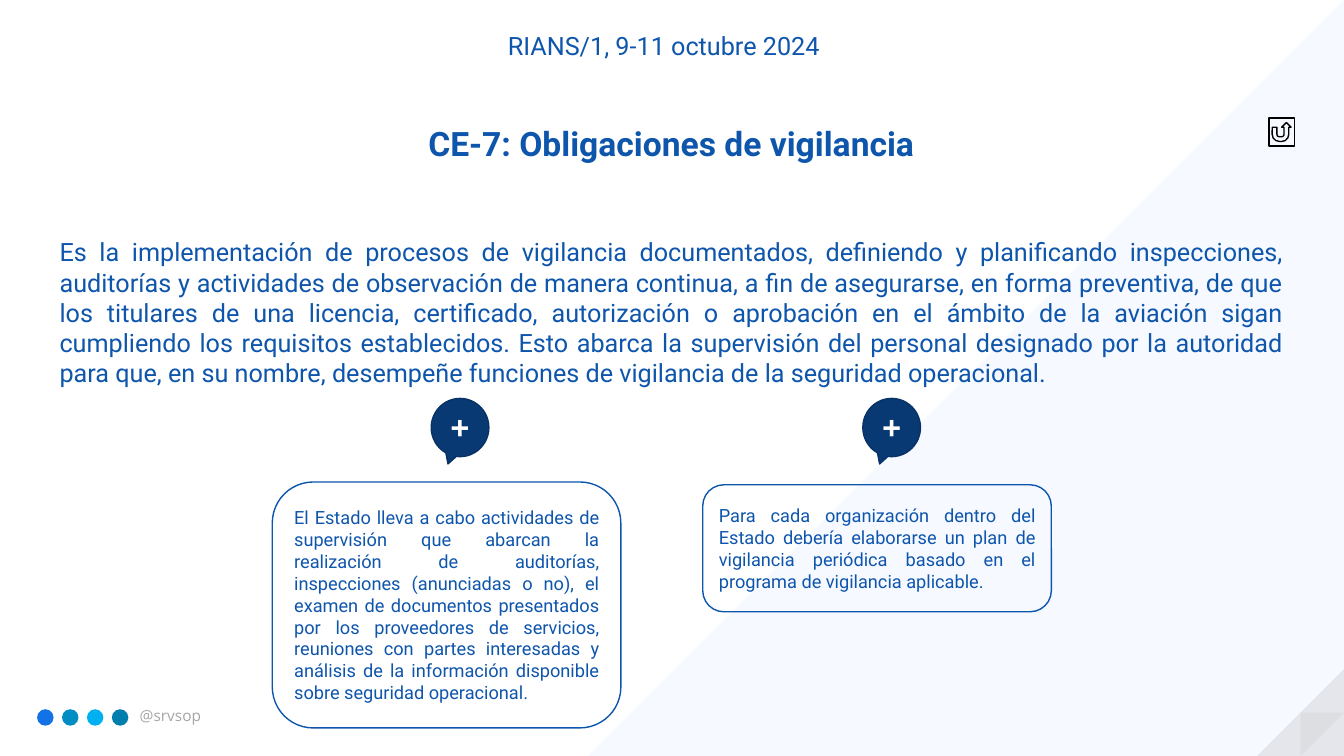
from lxml import etree
from pptx import Presentation
from pptx.dml.color import RGBColor
from pptx.enum import shapes as s, text as t
from pptx.oxml.ns import qn
from pptx.util import Pt

WHITE = RGBColor(0xFF, 0xFF, 0xFF)
BLACK = RGBColor(0, 0, 0)
BLUE = RGBColor(0x0E, 0x55, 0xAC)
NAVY = RGBColor(0x09, 0x39, 0x73)
NAVY_EDGE = RGBColor(0x08, 0x32, 0x65)
PALE = RGBColor(0xF6, 0xF9, 0xFF)
GREY = RGBColor(0xA6, 0xA6, 0xA6)
LIGHT_GREY = RGBColor(0xBF, 0xBF, 0xBF)
ICON_COLOURS = [RGBColor(0x13, 0x72, 0xE6), RGBColor(0x00, 0x8D, 0xC3),
                RGBColor(0x00, 0xB0, 0xF0), RGBColor(0x00, 0x7E, 0xAE)]

prs = Presentation()
prs.slide_width, prs.slide_height = Pt(960), Pt(540)
slide = prs.slides.add_slide(prs.slide_layouts[5])


def add_plain(kind, left, top, width, height, fill=None, line=None):
    """Add a shadowless preset shape; a missing colour means no fill or no line."""
    shape = slide.shapes.add_shape(kind, Pt(left), Pt(top), Pt(width), Pt(height))
    shape.shadow.inherit = False
    if fill is None:
        shape.fill.background()
    else:
        shape.fill.solid()
        shape.fill.fore_color.rgb = fill
    if line is None:
        shape.line.fill.background()
    else:
        shape.line.color.rgb = line
        shape.line.width = Pt(1)
    return shape


def write(shape, wording, size, colour, align, font="Roboto", bold=False,
          anchor=t.MSO_ANCHOR.TOP):
    frame = shape.text_frame
    frame.word_wrap = True
    frame.auto_size = t.MSO_AUTO_SIZE.NONE
    frame.vertical_anchor = anchor
    paragraph = frame.paragraphs[0]
    paragraph.alignment = align
    run = paragraph.add_run()
    run.text = wording
    run.font.size = Pt(size)
    run.font.name = font
    run.font.bold = bold
    run.font.color.rgb = colour


# Background corner: left, top, side, colour, flip, opacity in percent
for left, top, side, colour, flip, opacity in [
        (420, 0, 540, PALE, "flipH", 100),
        (898, 478, 62, GREY, "flipH", 22),
        (929, 509, 31, LIGHT_GREY, "flipV", 20)]:
    corner = add_plain(s.MSO_SHAPE.RIGHT_TRIANGLE, left, top, side, side, colour)
    corner._element.spPr.find(qn("a:xfrm")).set(flip, "1")
    if opacity < 100:
        rgb = corner._element.spPr.find(qn("a:solidFill")).find(qn("a:srgbClr"))
        etree.SubElement(rgb, qn("a:alpha")).set("val", str(opacity * 1000))

# Social media row
for i, colour in enumerate(ICON_COLOURS):
    add_plain(s.MSO_SHAPE.OVAL, 26.5 + 17.8 * i, 506.6, 11.8, 11.8, colour)
handle = slide.shapes.add_textbox(Pt(92.7), Pt(501.1), Pt(107), Pt(21))
write(handle, "@srvsop", 11, GREY, t.PP_ALIGN.LEFT, "Open Sans")

# Heading and definition
event = slide.shapes.add_textbox(Pt(258.5), Pt(18), Pt(431.3), Pt(29))
write(event, "RIANS/1, 9-11 octubre 2024", 18, BLUE, t.PP_ALIGN.CENTER)

title = slide.shapes.title
title.left, title.top, title.width, title.height = Pt(72.7), Pt(84.2), Pt(813.6), Pt(36)
write(title, "CE-7: Obligaciones de vigilancia", 24, BLUE, t.PP_ALIGN.CENTER, bold=True)

definition = slide.shapes.add_textbox(Pt(35.5), Pt(165.6), Pt(888.5), Pt(138))
write(definition,
      "Es la implementación de procesos de vigilancia documentados, definiendo y "
      "planificando inspecciones, auditorías y actividades de observación de manera "
      "continua, a fin de asegurarse, en forma preventiva, de que los titulares de una "
      "licencia, certificado, autorización o aprobación en el ámbito de la aviación sigan "
      "cumpliendo los requisitos establecidos. Esto abarca la supervisión del personal "
      "designado por la autoridad para que, en su nombre, desempeñe funciones de "
      "vigilancia de la seguridad operacional.",
      18, BLUE, t.PP_ALIGN.JUSTIFY)

# Details: callout left, box left, box top, box height, wording
for plus_left, left, top, height, wording in [
        (616.3, 502, 346.3, 90.7,
         "Para cada organización dentro del Estado debería elaborarse un plan de "
         "vigilancia periódica basado en el programa de vigilancia aplicable."),
        (308, 194.5, 344.3, 175.7,
         "El Estado lleva a cabo actividades de supervisión que abarcan la realización "
         "de auditorías, inspecciones (anunciadas o no), el examen de documentos "
         "presentados por los proveedores de servicios, reuniones con partes interesadas "
         "y análisis de la información disponible sobre seguridad operacional.")]:
    plus = add_plain(s.MSO_SHAPE.OVAL_CALLOUT, plus_left, 284.6, 41.2, 41.6,
                     NAVY, NAVY_EDGE)
    write(plus, "+", 24, WHITE, t.PP_ALIGN.CENTER, "Open Sans", True,
          t.MSO_ANCHOR.MIDDLE)
    detail = add_plain(s.MSO_SHAPE.ROUNDED_RECTANGLE, left, top, 249, height, line=BLUE)
    write(detail, wording, 13, BLUE, t.PP_ALIGN.JUSTIFY, anchor=t.MSO_ANCHOR.MIDDLE)

add_plain(s.MSO_SHAPE.ACTION_BUTTON_RETURN, 906.5, 84.2, 18, 20.2, line=BLACK)

prs.save("out.pptx")
